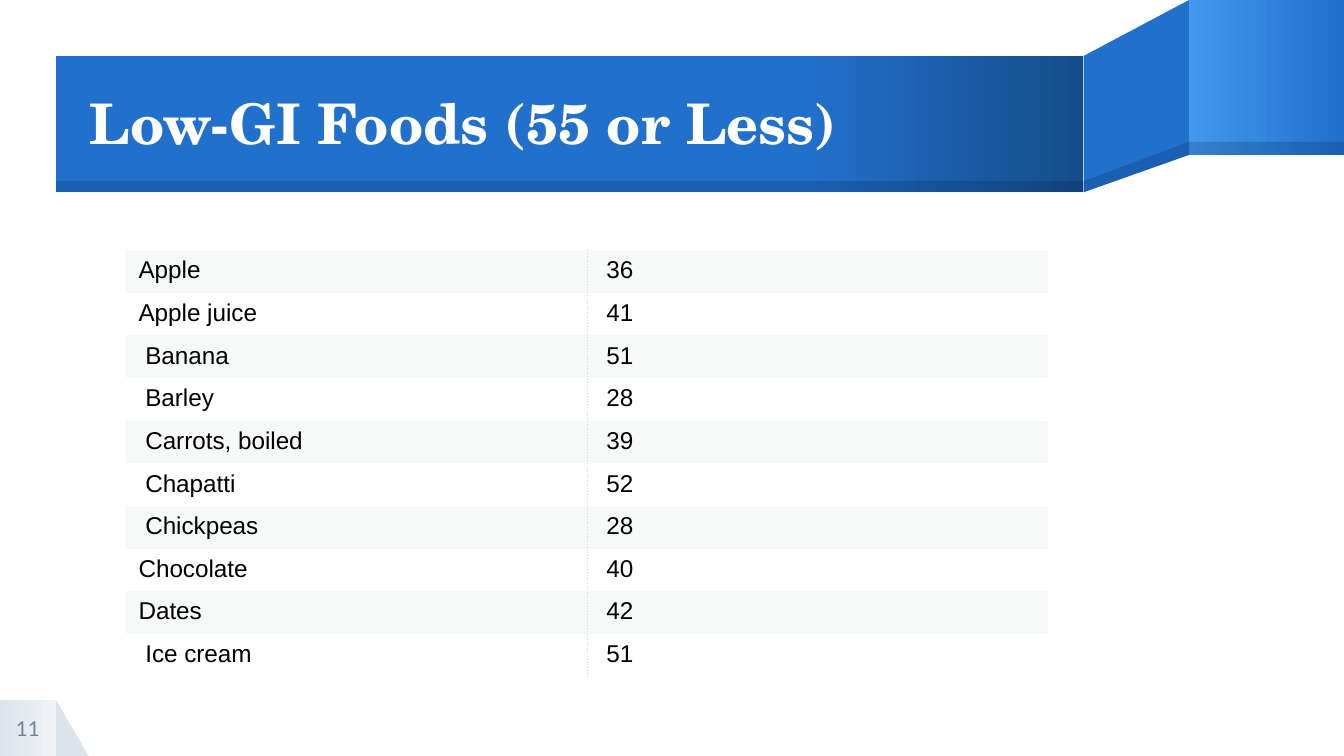
from dataclasses import dataclass
from typing import Any, Optional

import lxml.etree
import pptx
import pptx.dml.color
import pptx.enum.shapes
import pptx.enum.text
import pptx.oxml
import pptx.oxml.ns
import pptx.util

Pt = pptx.util.Pt
RGBColor = pptx.dml.color.RGBColor
Kind = pptx.enum.shapes.MSO_SHAPE
Anchor = pptx.enum.text.MSO_ANCHOR
Align = pptx.enum.text.PP_ALIGN
qn = pptx.oxml.ns.qn

WHITE = RGBColor(0xFF, 0xFF, 0xFF)
BLACK = RGBColor(0, 0, 0)
BLUE = RGBColor(0x21, 0x70, 0xCC)
SKY = RGBColor(0x43, 0x97, 0xEE)
NAVY = RGBColor(0x15, 0x4C, 0x8A)
SHADE = RGBColor(0x00, 0x1F, 0x46)
MIST = RGBColor(0xDD, 0xE3, 0xEB)
PALE = RGBColor(0xF0, 0xF3, 0xF7)
SLATE = RGBColor(0x74, 0x83, 0x94)
BAND = RGBColor(0xF7, 0xF9, 0xF9)
RULE = RGBColor(0xD3, 0xD3, 0xD3)

NO_STYLE = "{2D5ABB26-0587-4C30-8999-92F81FD0307C}"
MARGINS = ("margin_left", "margin_top", "margin_right", "margin_bottom")
FRAME = {"word_wrap": True, "vertical_anchor": Anchor.MIDDLE, **dict.fromkeys(MARGINS, 0)}


@dataclass(frozen=True)
class Paint:
    color: RGBColor
    end: Optional[RGBColor] = None
    start: float = 0
    alpha: int = 100


@dataclass(frozen=True)
class Box:
    left: float
    top: float
    width: float
    height: float
    paint: Paint
    kind: Any = Kind.RECTANGLE


@dataclass(frozen=True)
class Fold:
    points: tuple[tuple[float, float], ...]
    paint: Paint


@dataclass(frozen=True)
class Food:
    name: str
    index: str


TINT = Paint(SHADE, alpha=20)
PARTS = (
    Box(30, 375, 17.5, 30, Paint(MIST), Kind.RIGHT_TRIANGLE),
    Box(0, 375, 30, 30, Paint(MIST, PALE)),
    Fold(((637, 0), (580.5, 30), (580.5, 103), (637, 83)), Paint(BLUE)),
    Box(637, 0, 83, 83, Paint(SKY, BLUE)),
    Box(30, 30, 550.5, 73, Paint(BLUE, NAVY, 0.73)),
    Fold(((637, 76), (580.5, 97), (580.5, 103), (637, 83)), TINT),
    Box(637, 76, 83, 7, TINT),
    Box(30, 97, 550.5, 6, TINT),
)
FOODS = (
    Food("Apple", " 36"),
    Food("Apple juice", " 41"),
    Food(" Banana", " 51"),
    Food(" Barley", " 28"),
    Food(" Carrots, boiled", " 39"),
    Food(" Chapatti", " 52"),
    Food(" Chickpeas", " 28"),
    Food("Chocolate", " 40"),
    Food("Dates", " 42"),
    Food(" Ice cream", " 51"),
)


def apply(item: Any, values: dict[str, Any]) -> None:
    for name, value in values.items():
        setattr(item, name, value)


def style(para: Any, face: str, size: float, color: RGBColor, bold: bool = False) -> None:
    apply(para.font, {"name": face, "size": Pt(size), "bold": bold})
    para.font.color.rgb = color


def coat(shape: Any, paint: Paint) -> None:
    shape.shadow.inherit = False
    shape.line.fill.background()
    if paint.end is not None:
        shape.fill.gradient()
        shape.fill.gradient_angle = 0
        stops = zip(shape.fill.gradient_stops, (paint.start, 1), (paint.color, paint.end))
        for stop, place, color in stops:
            stop.position = place
            stop.color.rgb = color
        return
    shape.fill.solid()
    shape.fill.fore_color.rgb = paint.color
    if paint.alpha < 100:
        tone = shape._element.spPr.find(qn("a:solidFill")).find(qn("a:srgbClr"))
        lxml.etree.SubElement(tone, qn("a:alpha"), val=str(paint.alpha * 1000))


def draw(shapes: Any, part: Box | Fold) -> None:
    if isinstance(part, Box):
        sides = map(Pt, (part.left, part.top, part.width, part.height))
        shape = shapes.add_shape(part.kind, *sides)
    else:
        first, *rest = [(Pt(x), Pt(y)) for x, y in part.points]
        outline = shapes.build_freeform(*first)
        outline.add_line_segments(rest, close=True)
        shape = outline.convert_to_shape()
    coat(shape, part.paint)


def border(cell: Any, side: str) -> None:
    line = pptx.oxml.parse_xml(
        f'<a:{side} xmlns:a="http://schemas.openxmlformats.org/drawingml/2006/main" '
        f'w="{int(Pt(0.5))}"><a:solidFill><a:srgbClr val="{RULE}"/></a:solidFill>'
        f'<a:prstDash val="dot"/></a:{side}>'
    )
    cell._tc.get_or_add_tcPr().insert(0, line)


def grid(shapes: Any, foods: tuple[Food, ...]) -> None:
    high = 22.25
    sides = map(Pt, (67.5, 134, 494, high * len(foods)))
    table = shapes.add_table(len(foods), 2, *sides).table
    apply(table, {"first_row": False, "horz_banding": False})
    table._tbl.tblPr.find(qn("a:tableStyleId")).text = NO_STYLE
    pads = dict(zip(MARGINS, map(Pt, (6.75, 3.6, 6.75, 3.6))))
    for row, food in enumerate(foods):
        table.rows[row].height = Pt(high)
        for col, (text, side) in enumerate(((food.name, "lnR"), (food.index, "lnL"))):
            cell = table.cell(row, col)
            apply(cell, {"text": text, **pads})
            style(cell.text_frame.paragraphs[0], "Arial", 13, BLACK)
            cell.fill.solid()
            cell.fill.fore_color.rgb = WHITE if row % 2 else BAND
            border(cell, side)


def head(shapes: Any, text: str) -> None:
    title = shapes.title
    shapes._spTree.append(title._element)
    sides = {"left": 48, "top": 31, "width": 532, "height": 73}
    apply(title, {name: Pt(value) for name, value in sides.items()})
    apply(title.text_frame, {"text": text, **FRAME})
    para = title.text_frame.paragraphs[0]
    apply(para, {"alignment": Align.LEFT, "line_spacing": 0.9})
    style(para, "TeX Gyre Schola", 30, WHITE, True)


def number(shapes: Any, text: str) -> None:
    frame = shapes.add_textbox(*map(Pt, (0, 375, 30, 30))).text_frame
    apply(frame, {"text": text, **FRAME})
    para = frame.paragraphs[0]
    para.alignment = Align.CENTER
    style(para, "Lato", 11, SLATE)


def main() -> None:
    deck = pptx.Presentation()
    apply(deck, {"slide_width": Pt(720), "slide_height": Pt(405)})
    shapes = deck.slides.add_slide(deck.slide_layouts[5]).shapes
    for part in PARTS:
        draw(shapes, part)
    head(shapes, "Low-GI Foods (55 or Less)")
    number(shapes, "11")
    grid(shapes, FOODS)
    deck.save("out.pptx")


if __name__ == "__main__":
    main()
